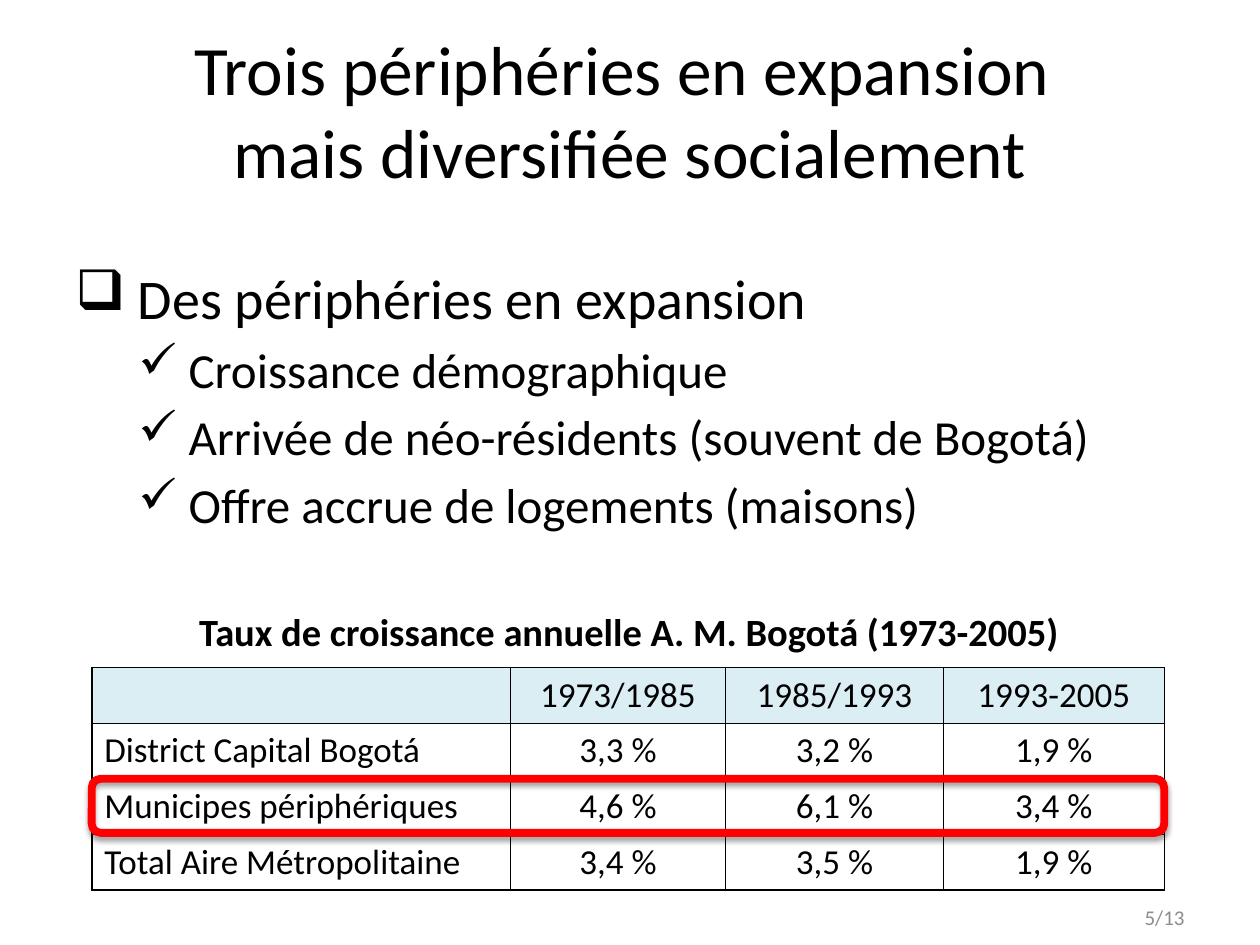
from lxml import etree
from pptx import Presentation
from pptx.dml.color import RGBColor
from pptx.enum.shapes import MSO_SHAPE
from pptx.enum.text import MSO_ANCHOR, PP_ALIGN
from pptx.oxml import parse_xml
from pptx.oxml.ns import nsdecls, qn
from pptx.util import Cm, Pt

LEFT, CENTER, RIGHT = PP_ALIGN.LEFT, PP_ALIGN.CENTER, PP_ALIGN.RIGHT
TOP, MIDDLE = MSO_ANCHOR.TOP, MSO_ANCHOR.MIDDLE
ROUNDED = MSO_SHAPE.ROUNDED_RECTANGLE

FONT = "Calibri"
BLACK, GREY, RED = "000000", "8C8C8C", "FF0000"
WHITE, PALE_BLUE = "FFFFFF", "DBEEF4"

BULLETS = [
    (0, " Des périphéries en expansion"),
    (1, " Croissance démographique"),
    (1, " Arrivée de néo-résidents (souvent de Bogotá)"),
    (1, " Offre accrue de logements (maisons)"),
]
# Per level: character, size, left margin (cm), hanging (cm), space before
LEVELS = [("❑", 32, 0.95, 0.95, 2), ("✓", 28, 2.06, 0.79, 5)]

GROWTH = [
    ("", "1973/1985", "1985/1993", "1993-2005"),
    ("District Capital Bogotá", "3,3 %", "3,2 %", "1,9 %"),
    ("Municipes périphériques", "4,6 %", "6,1 %", "3,4 %"),
    ("Total Aire Métropolitaine", "3,4 %", "3,5 %", "1,9 %"),
]
COLUMN_WIDTHS = [8.44, 4.34, 4.39, 4.45]
ROW_HEIGHT = 1.12
HIGHLIGHTED_ROW = 2


def color(value):
    return RGBColor.from_string(value)


def add_run(p, text, size, ink=BLACK, bold=False):
    r = p.add_run()
    r.text = text
    r.font.name = FONT
    r.font.size = Pt(size)
    r.font.bold = bold
    r.font.color.rgb = color(ink)


def add_text_frame(s, x, y, w, h, anchor=TOP):
    tf = s.shapes.add_textbox(Cm(x), Cm(y), Cm(w), Cm(h)).text_frame
    tf.word_wrap = True
    tf.vertical_anchor = anchor
    return tf


def add_title(s, x, y, w, h):
    p = add_text_frame(s, x, y, w, h, MIDDLE).paragraphs[0]
    p.alignment = CENTER
    add_run(p, "Trois périphéries en expansion ", 39.6)
    p.add_line_break()
    add_run(p, "mais diversifiée socialement", 39.6)


def add_bullets(s, x, y, w, h):
    tf = add_text_frame(s, x, y, w, h)
    for i, (level, text) in enumerate(BULLETS):
        char, size, margin, hanging, before = LEVELS[level]
        p = tf.add_paragraph() if i else tf.paragraphs[0]
        p.level = level
        p.space_before = Pt(before)
        pPr = p._p.get_or_add_pPr()
        pPr.set("marL", str(Cm(margin)))
        pPr.set("indent", str(-Cm(hanging)))
        etree.SubElement(pPr, qn("a:buChar")).set("char", char)
        add_run(p, text, size)


def set_cell(cell, text, fill, align):
    # Borders come before the fill in the cell properties
    tcPr = cell._tc.get_or_add_tcPr()
    for side in ("lnL", "lnR", "lnT", "lnB"):
        tcPr.append(parse_xml(
            f'<a:{side} {nsdecls("a")} w="{Pt(1)}"><a:solidFill>'
            f'<a:srgbClr val="{BLACK}"/></a:solidFill></a:{side}>'))
    cell.fill.solid()
    cell.fill.fore_color.rgb = color(fill)
    p = cell.text_frame.paragraphs[0]
    p.alignment = align
    if text:
        add_run(p, text, 20)


def add_highlight(s, x, y, w, h):
    frame = s.shapes.add_shape(ROUNDED, Cm(x), Cm(y), Cm(w), Cm(h))
    frame.fill.background()
    frame.line.color.rgb = color(RED)
    frame.line.width = Pt(4.5)
    frame.shadow.inherit = False
    effects = frame._element.spPr.find(qn("a:effectLst"))
    effects.append(parse_xml(
        f'<a:outerShdw {nsdecls("a")} blurRad="{Pt(3.1)}" dist="{Pt(1.8)}" '
        f'dir="5400000" rotWithShape="0"><a:srgbClr val="{BLACK}">'
        '<a:alpha val="35000"/></a:srgbClr></a:outerShdw>'))


def add_growth_table(s, x, y, w):
    # Caption
    p = add_text_frame(s, x - 1.07, y - 1.32, w + 2.18, 1.19).paragraphs[0]
    p.alignment = CENTER
    add_run(p, "Taux de croissance annuelle A. M. Bogotá (1973-2005)", 22, bold=True)

    # Table
    rows, cols = len(GROWTH), len(COLUMN_WIDTHS)
    table = s.shapes.add_table(
        rows, cols, Cm(x), Cm(y), Cm(w), Cm(rows * ROW_HEIGHT)).table
    for column, width in zip(table.columns, COLUMN_WIDTHS):
        column.width = Cm(width)
    for i, values in enumerate(GROWTH):
        table.rows[i].height = Cm(ROW_HEIGHT)
        for j, text in enumerate(values):
            set_cell(table.cell(i, j), text, WHITE if i else PALE_BLUE,
                     CENTER if j else LEFT)

    # Frame around the peripheral towns
    add_highlight(s, x, y + HIGHLIGHTED_ROW * ROW_HEIGHT, w, 1.09)


def add_page_number(s, x, y, w, h):
    p = add_text_frame(s, x, y, w, h, MIDDLE).paragraphs[0]
    p.alignment = RIGHT
    add_run(p, "5/13", 12, GREY)


def main():
    prs = Presentation()
    prs.slide_width, prs.slide_height = Cm(25.4), Cm(19.05)
    s = prs.slides.add_slide(prs.slide_layouts[6])
    add_title(s, 1.27, 0.61, 22.86, 3.18)
    add_bullets(s, 1.27, 5.18, 22.86, 11.84)
    add_growth_table(s, 1.85, 13.46, sum(COLUMN_WIDTHS))
    add_page_number(s, 18.21, 17.98, 5.92, 1.02)
    prs.save("out.pptx")


if __name__ == "__main__":
    main()
